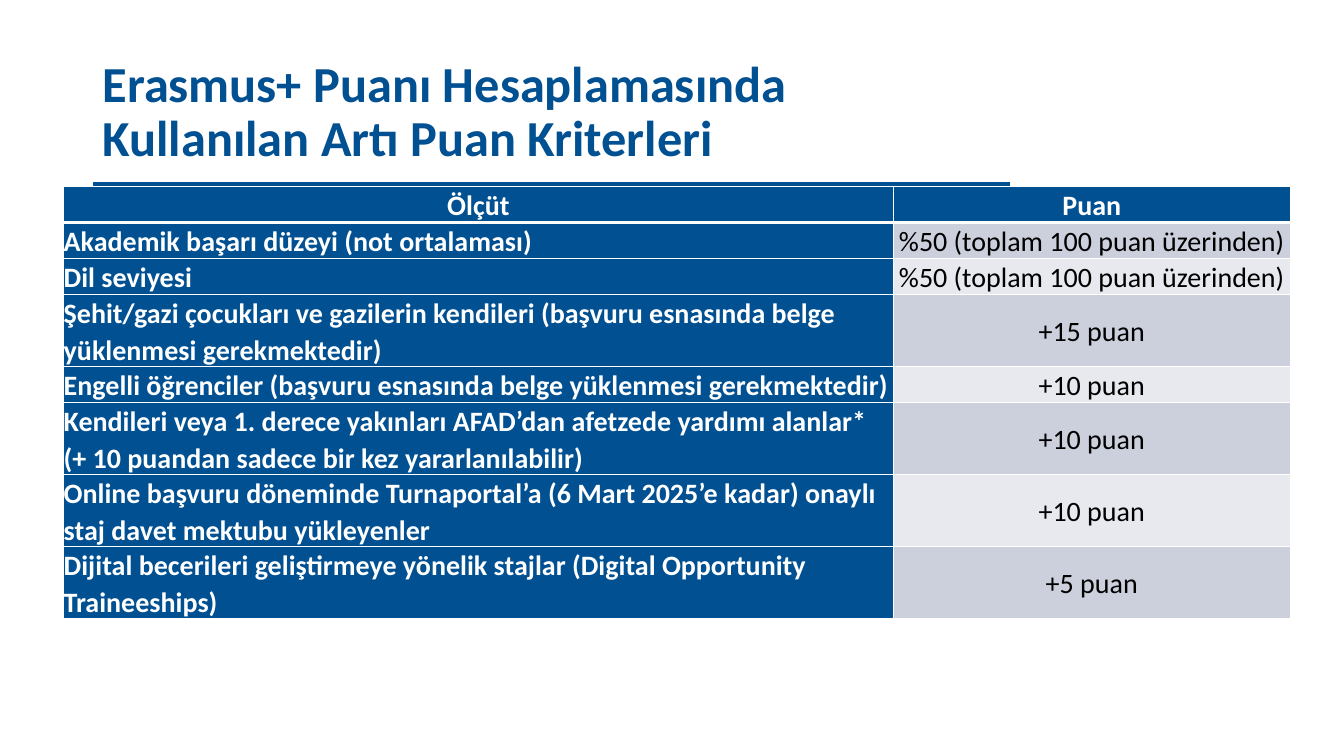
from lxml import etree
from pptx import Presentation
from pptx.dml.color import RGBColor
from pptx.enum.shapes import MSO_CONNECTOR
from pptx.enum.text import MSO_ANCHOR, PP_ALIGN
from pptx.oxml.ns import qn
from pptx.util import Pt

# Content
TITLE = "Erasmus+ Puanı Hesaplamasında Kullanılan Artı Puan Kriterleri"
HEADER = (["Ölçüt"], "Puan", 1)
# Criterion paragraphs, points, number of text lines
CRITERIA = [
    (["Akademik başarı düzeyi (not ortalaması)"], "%50 (toplam 100 puan üzerinden)", 1),
    (["Dil seviyesi"], "%50 (toplam 100 puan üzerinden)", 1),
    (["Şehit/gazi çocukları ve gazilerin kendileri (başvuru esnasında belge "
      "yüklenmesi gerekmektedir)"], "+15 puan", 2),
    (["Engelli öğrenciler (başvuru esnasında belge yüklenmesi gerekmektedir)"], "+10 puan", 1),
    (["Kendileri veya 1. derece yakınları AFAD’dan afetzede yardımı alanlar*",
      "(+ 10 puandan sadece bir kez yararlanılabilir)"], "+10 puan", 2),
    (["Online başvuru döneminde Turnaportal’a (6 Mart 2025’e kadar) onaylı "
      "staj davet mektubu yükleyenler"], "+10 puan", 2),
    (["Dijital becerileri geliştirmeye yönelik stajlar (Digital Opportunity "
      "Traineeships)"], "+5 puan", 2),
]

# Look
FONT = "Calibri"
BLUE = RGBColor(0x01, 0x50, 0x92)
WHITE = RGBColor(0xFF, 0xFF, 0xFF)
BLACK = RGBColor(0, 0, 0)
BANDS = (RGBColor(0xCC, 0xD0, 0xDC), RGBColor(0xE7, 0xE9, 0xEE))

# Layout in points
TITLE_LEFT, TITLE_TOP, TITLE_WIDTH, TITLE_HEIGHT = 66.25, 28.8, 655, 104.4
RULE_Y = TITLE_TOP + TITLE_HEIGHT
TABLE_LEFT = 45.5
COLUMN_WIDTHS = (592.5, 283.75)
LINE_HEIGHT = 25.25


def write(paragraph, text, size, color, bold, spacing, align=PP_ALIGN.LEFT):
    paragraph.alignment = align
    paragraph.line_spacing = spacing
    run = paragraph.add_run()
    run.text = text
    run.font.name = FONT
    run.font.size = Pt(size)
    run.font.bold = bold
    run.font.color.rgb = color


def set_borders(cell, top, bottom):
    properties = cell._tc.get_or_add_tcPr()
    widths = {"a:lnL": 1, "a:lnR": 1, "a:lnT": top, "a:lnB": bottom}
    for position, (side, width) in enumerate(widths.items()):
        border = etree.Element(qn(side), w=str(Pt(width)))
        fill = etree.SubElement(border, qn("a:solidFill"))
        etree.SubElement(fill, qn("a:srgbClr"), val=str(WHITE))
        properties.insert(position, border)


def fill_cell(cell, paragraphs, fill, color, bold, align):
    cell.margin_left = cell.margin_right = cell.margin_top = cell.margin_bottom = 0
    cell.vertical_anchor = MSO_ANCHOR.MIDDLE
    cell.fill.solid()
    cell.fill.fore_color.rgb = fill
    frame = cell.text_frame
    for i, text in enumerate(paragraphs):
        paragraph = frame.add_paragraph() if i else frame.paragraphs[0]
        write(paragraph, text, 20, color, bold, 1.07, align)


prs = Presentation()
prs.slide_width, prs.slide_height = Pt(960), Pt(540)
slide = prs.slides.add_slide(prs.slide_layouts[6])

# Rule under the title
rule = slide.shapes.add_connector(
    MSO_CONNECTOR.STRAIGHT, Pt(TITLE_LEFT), Pt(RULE_Y), Pt(TITLE_LEFT + TITLE_WIDTH), Pt(RULE_Y))
rule.line.color.rgb = BLUE
rule.line.width = Pt(6)
etree.SubElement(rule._element.spPr, qn("a:effectLst"))

# Title
title = slide.shapes.add_textbox(
    Pt(TITLE_LEFT), Pt(TITLE_TOP), Pt(TITLE_WIDTH), Pt(TITLE_HEIGHT)).text_frame
title.word_wrap = True
title.vertical_anchor = MSO_ANCHOR.MIDDLE
write(title.paragraphs[0], TITLE, 36, BLUE, True, 0.9)

# Criteria table
rows = [HEADER] + CRITERIA
total_lines = sum(lines for _, _, lines in rows)
table = slide.shapes.add_table(
    len(rows), len(COLUMN_WIDTHS), Pt(TABLE_LEFT), Pt(RULE_Y),
    Pt(sum(COLUMN_WIDTHS)), Pt(total_lines * LINE_HEIGHT)).table
table.horz_banding = False
for column, width in zip(table.columns, COLUMN_WIDTHS):
    column.width = Pt(width)

for r, (criterion, points, lines) in enumerate(rows):
    table.rows[r].height = Pt(lines * LINE_HEIGHT)
    is_header = r == 0
    criterion_cell, points_cell = table.cell(r, 0), table.cell(r, 1)
    fill_cell(criterion_cell, criterion, BLUE, WHITE, True,
              PP_ALIGN.CENTER if is_header else PP_ALIGN.LEFT)
    fill_cell(points_cell, [points], BLUE if is_header else BANDS[(r - 1) % 2],
              WHITE if is_header else BLACK, is_header, PP_ALIGN.CENTER)
    for cell in (criterion_cell, points_cell):
        set_borders(cell, top=3 if r == 1 else 1, bottom=3 if is_header else 1)

prs.save("out.pptx")
